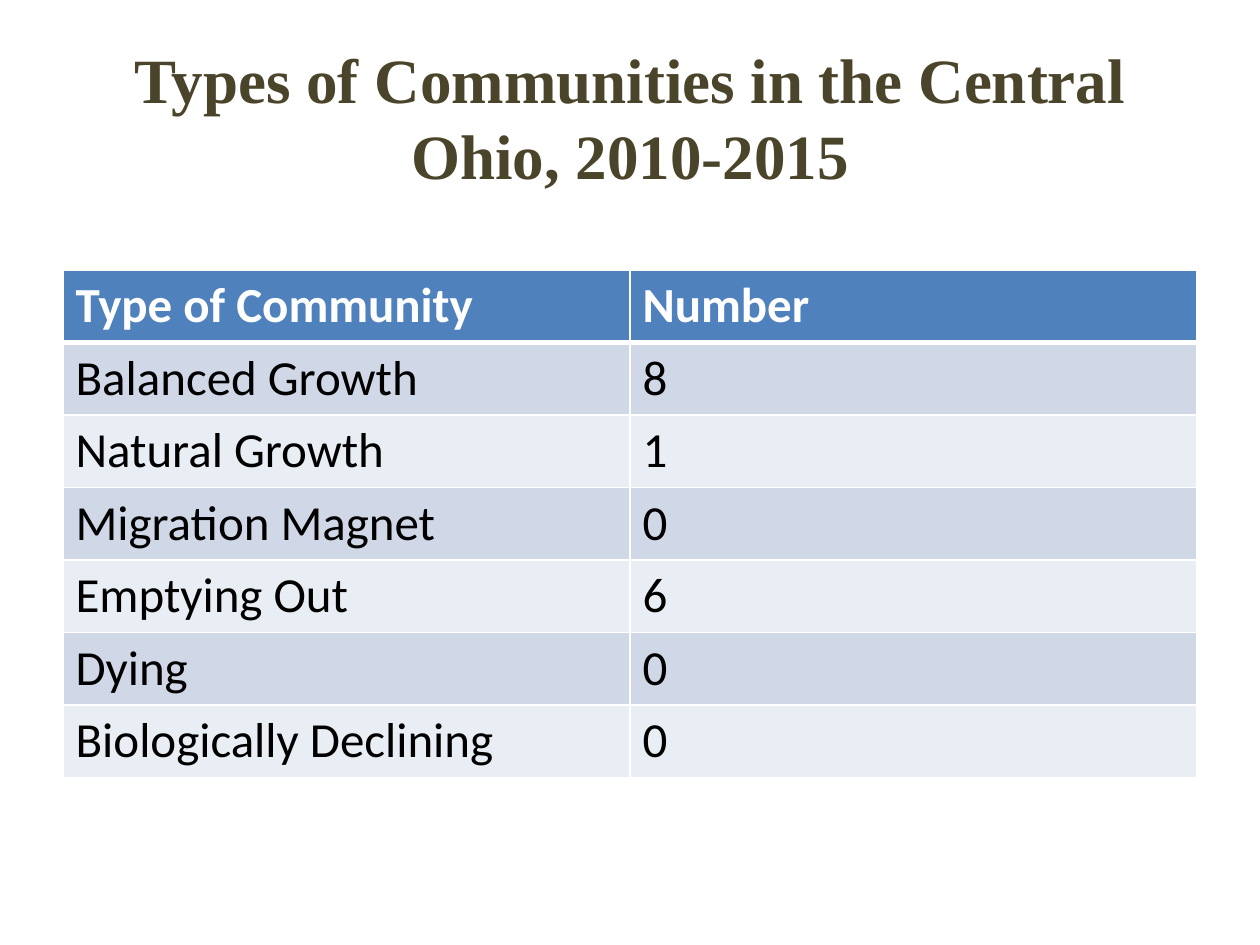
from lxml import etree
from pptx import Presentation
from pptx.dml.color import RGBColor
from pptx.enum.text import MSO_ANCHOR, PP_ALIGN
from pptx.oxml.ns import qn
from pptx.util import Cm, Pt

MIDDLE, TOP = MSO_ANCHOR.MIDDLE, MSO_ANCHOR.TOP
CENTER, LEFT = PP_ALIGN.CENTER, PP_ALIGN.LEFT

# Content
TITLE = "Types of Communities in the Central Ohio, 2010-2015"
ROWS = [
    ("Type of Community", "Number"),
    ("Balanced Growth", "8"),
    ("Natural Growth", "1"),
    ("Migration Magnet", "0"),
    ("Emptying Out", "6"),
    ("Dying", "0"),
    ("Biologically Declining", "0"),
]
COLORS = {
    "title": "4A452A", "head": "4F81BD", "odd": "D0D8E8",
    "even": "E9EDF4", "white": "FFFFFF", "black": "000000",
}

# Layout in cm
SIDE, WIDTH = 1.27, 22.86
TABLE_TOP, ROW_HIGH = 5.44, 1.46


def rgb(name):
    return RGBColor.from_string(COLORS[name])


def write(frame, text, size=28, font="Calibri", color="black", bold=False,
          align=LEFT, anchor=TOP):
    frame.word_wrap = True
    frame.vertical_anchor = anchor
    para = frame.paragraphs[0]
    para.alignment = align
    run = para.add_run()
    run.text = text
    run.font.size = Pt(size)
    run.font.name = font
    run.font.bold = bold
    run.font.color.rgb = rgb(color)


def border(cell, **widths):
    props = cell._tc.get_or_add_tcPr()
    for side in "LRTB":
        line = etree.SubElement(props, qn(f"a:ln{side}"),
                                w=str(Pt(widths.get(side, 1))))
        fill = etree.SubElement(line, qn("a:solidFill"))
        etree.SubElement(fill, qn("a:srgbClr"), val=COLORS["white"])


def main():
    deck = Presentation()
    deck.slide_width, deck.slide_height = Cm(25.4), Cm(19.05)
    slide = deck.slides.add_slide(deck.slide_layouts[5])

    # Title
    title = slide.shapes.title
    title.left, title.top = Cm(SIDE), Cm(0.76)
    title.width, title.height = Cm(WIDTH), Cm(3.18)
    write(title.text_frame, TITLE, size=36, font="Times New Roman",
          color="title", bold=True, align=CENTER, anchor=MIDDLE)

    # Table of communities
    table = slide.shapes.add_table(
        len(ROWS), len(ROWS[0]), Cm(SIDE), Cm(TABLE_TOP),
        Cm(WIDTH), Cm(ROW_HIGH * len(ROWS))).table
    for i, row in enumerate(ROWS):
        table.rows[i].height = Cm(ROW_HIGH)
        head = i == 0
        shade = "head" if head else ("even", "odd")[i % 2]
        for j, text in enumerate(row):
            cell = table.cell(i, j)
            border(cell, B=3 if head else 1, T=3 if i == 1 else 1)
            cell.fill.solid()
            cell.fill.fore_color.rgb = rgb(shade)
            write(cell.text_frame, text, bold=head,
                  color="white" if head else "black")

    deck.save("out.pptx")


if __name__ == "__main__":
    main()
